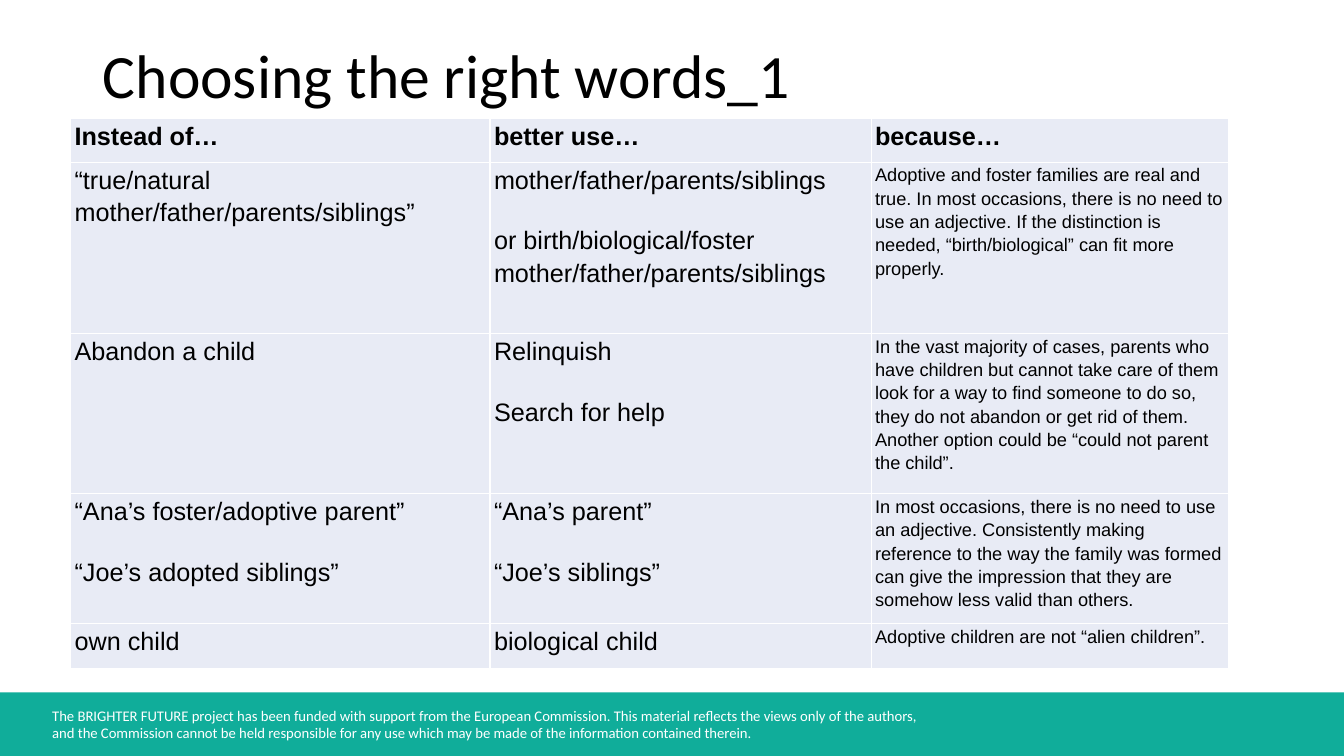
from lxml.etree import SubElement
from pptx import Presentation
from pptx.dml.color import RGBColor
from pptx.enum.shapes import MSO_SHAPE
from pptx.enum.text import MSO_ANCHOR, PP_ALIGN
from pptx.oxml.ns import qn
from pptx.util import Inches, Pt

TITLE = "Choosing the right words_1"
FOOTER = (
    "The BRIGHTER FUTURE project has been funded with support from the European Commission. "
    "This material reflects the views only of the authors,\n"
    "and the Commission cannot be held responsible for any use which may be made of "
    "the information contained therein."
)
# Each line of a cell's text is a paragraph.
ROWS = [
    ("Instead of…", "better use…", "because…"),
    (
        "“true/natural mother/father/parents/siblings”",
        "mother/father/parents/siblings\n"
        "or birth/biological/foster mother/father/parents/siblings",
        "Adoptive and foster families are real and true. In most occasions, there is no need to "
        "use an adjective. If the distinction is needed, “birth/biological” can fit more properly.",
    ),
    (
        "Abandon a child",
        "Relinquish\nSearch for help",
        "In the vast majority of cases, parents who have children but cannot take care of them "
        "look for a way to find someone to do so, they do not abandon or get rid of them. "
        "Another option could be “could not parent the child”.",
    ),
    (
        "“Ana’s foster/adoptive parent”\n“Joe’s adopted siblings”",
        "“Ana’s parent”\n“Joe’s siblings”",
        "In most occasions, there is no need to use an adjective. Consistently making reference "
        "to the way the family was formed can give the impression that they are somehow less "
        "valid than others.",
    ),
    ("own child", "biological child", "Adoptive children are not “alien children”."),
]
COLUMN_WIDTHS = (4.16, 3.78, 3.55)
ROW_HEIGHTS = (0.44, 1.7, 1.59, 1.29, 0.44)

BLACK = RGBColor(0, 0, 0)
WHITE = RGBColor(255, 255, 255)
TEAL = RGBColor(0x10, 0xAD, 0x9A)
LAVENDER = RGBColor(0xE8, 0xEB, 0xF5)


def style_font(font, name, size, color, bold=False):
    font.name, font.size, font.bold = name, Pt(size), bold
    font.color.rgb = color


def add_borders(cell, color, width):
    properties = cell._tc.get_or_add_tcPr()
    for side in ("a:lnL", "a:lnR", "a:lnT", "a:lnB"):
        line = SubElement(properties, qn(side), w=str(Pt(width)))
        fill = SubElement(line, qn("a:solidFill"))
        SubElement(fill, qn("a:srgbClr"), val=str(color))


def fill_cell(cell, text, size, bold):
    add_borders(cell, WHITE, 1)
    cell.fill.solid()
    cell.fill.fore_color.rgb = LAVENDER
    cell.margin_left = cell.margin_right = Inches(0.04)
    cell.margin_top = cell.margin_bottom = 0
    cell.vertical_anchor = MSO_ANCHOR.TOP
    cell.text_frame.text = text
    for index, para in enumerate(cell.text_frame.paragraphs):
        para.line_spacing = 1.15
        if index:
            para.space_before = Pt(20)
        for span in para.runs:
            style_font(span.font, "Arial", size, BLACK, bold)


def add_footer(page):
    band = page.shapes.add_shape(
        MSO_SHAPE.RECTANGLE, 0, Inches(6.87), Inches(13.33), Inches(0.63))
    band.shadow.inherit = False
    band.fill.solid()
    band.fill.fore_color.rgb = TEAL
    band.line.fill.background()

    box = page.shapes.add_textbox(Inches(0.42), Inches(6.96), Inches(10), Inches(0.45))
    box.text_frame.word_wrap = True
    para = box.text_frame.paragraphs[0]
    para.text = FOOTER
    for span in para.runs:
        style_font(span.font, "Calibri", 10.5, WHITE)


def add_title(page):
    title = page.shapes.title
    title.left, title.top = Inches(0.92), Inches(0.33)
    title.width, title.height = Inches(11.5), Inches(0.89)
    title.text_frame.text = TITLE
    title.text_frame.vertical_anchor = MSO_ANCHOR.MIDDLE
    para = title.text_frame.paragraphs[0]
    para.alignment = PP_ALIGN.LEFT
    para.line_spacing = 0.9
    style_font(para.runs[0].font, "Calibri", 44, BLACK)


def add_word_table(page):
    table = page.shapes.add_table(
        len(ROWS), len(COLUMN_WIDTHS), Inches(0.7), Inches(1.17),
        Inches(sum(COLUMN_WIDTHS)), Inches(sum(ROW_HEIGHTS))).table
    table.horz_banding = False
    for column, width in zip(table.columns, COLUMN_WIDTHS):
        column.width = Inches(width)
    for row, height in zip(table.rows, ROW_HEIGHTS):
        row.height = Inches(height)
    for r, texts in enumerate(ROWS):
        for c, text in enumerate(texts):
            is_header = r == 0
            is_reason = c == 2 and not is_header
            fill_cell(table.cell(r, c), text, 13 if is_reason else 18, is_header)


def main():
    deck = Presentation()
    deck.slide_width, deck.slide_height = Inches(13.33), Inches(7.5)
    page = deck.slides.add_slide(deck.slide_layouts[5])
    add_footer(page)
    add_title(page)
    add_word_table(page)
    deck.save("out.pptx")


if __name__ == "__main__":
    main()
